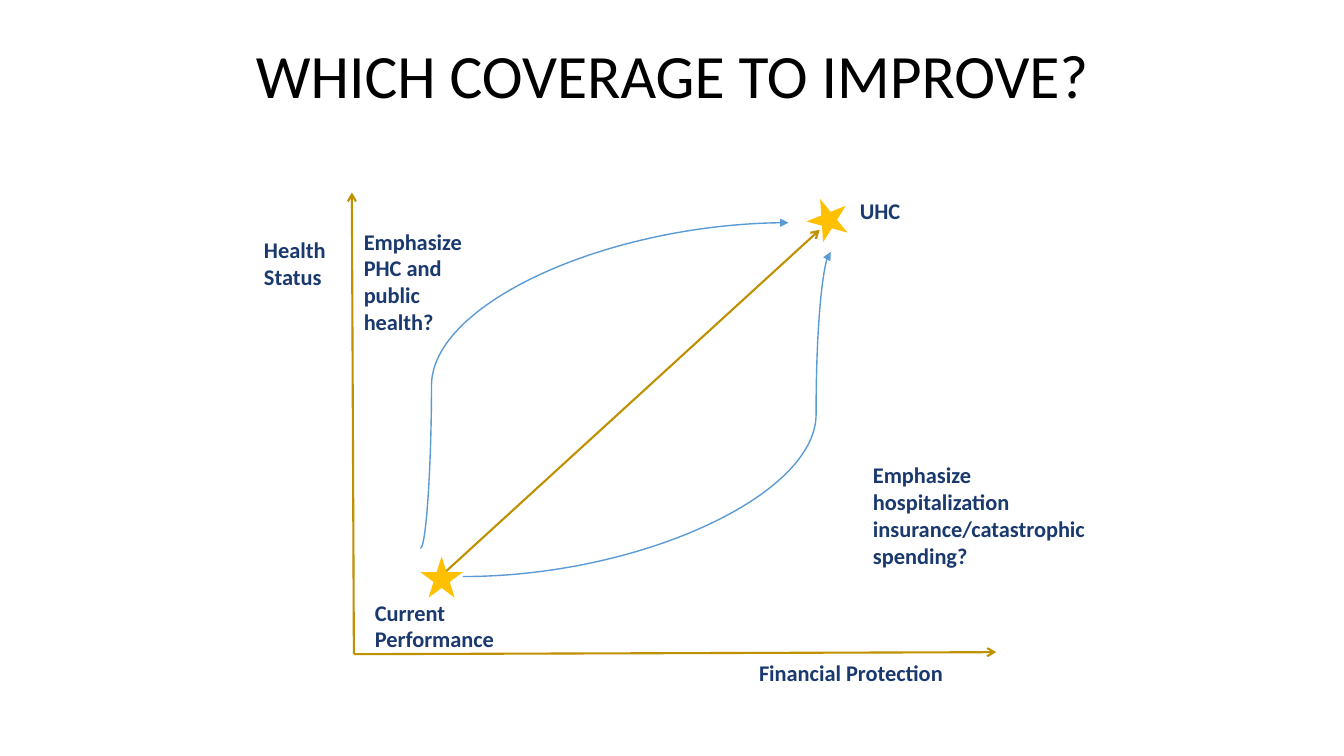
from lxml import etree
from pptx import Presentation
from pptx.dml.color import RGBColor
from pptx.enum.shapes import MSO_CONNECTOR, MSO_SHAPE
from pptx.enum.text import MSO_ANCHOR, MSO_AUTO_SIZE, PP_ALIGN
from pptx.oxml.ns import qn
from pptx.util import Inches, Pt

STRAIGHT, CURVE = MSO_CONNECTOR.STRAIGHT, MSO_CONNECTOR.CURVE
STAR = MSO_SHAPE.STAR_5_POINT
TOP, CENTER, LEFT = MSO_ANCHOR.TOP, PP_ALIGN.CENTER, PP_ALIGN.LEFT
FIT, FIXED = MSO_AUTO_SIZE.SHAPE_TO_FIT_TEXT, MSO_AUTO_SIZE.NONE

COLORS = {"title": "000000", "label": "1A396E", "axis": "BF9000",
          "star": "FFC000", "curve": "5B9BD5"}
FONT = "Calibri"

TITLE = "WHICH COVERAGE TO IMPROVE?"
TITLE_BOX = (0.92, 0.4, 11.5, 1.45)

# text, (left, top, width, height)
LABELS = [
    ("Current Performance", (3.62, 5.89, 2.06, 0.64)),
    ("UHC", (8.43, 1.91, 1.84, 0.37)),
    ("Health Status", (2.52, 2.29, 1.1, 0.64)),
    ("Financial Protection", (7.43, 6.49, 2.33, 0.37)),
    ("Emphasize PHC and public health?", (3.51, 2.21, 1.27, 1.18)),
    ("Emphasize hospitalization insurance/catastrophic spending?",
     (8.56, 4.53, 2.41, 1.18)),
]

# start, end
ORIGIN = (3.51, 6.49)
STRAIGHT_ARROWS = [
    (ORIGIN, (3.49, 1.91)),
    (ORIGIN, (9.88, 6.47)),
    ((4.4, 5.69), (8.13, 2.28)),
]
# start, end, bend position as a share of the width
CURVED_ARROWS = [
    ((4.17, 5.44), (7.82, 2.21), 0.03),
    ((4.59, 5.72), (8.24, 2.5), 0.96),
]

# left, top, rotation
STARS = [(4.17, 5.52, 0), (8, 1.96, 338.5)]
STAR_SIZE = (0.42, 0.41)


def rgb(name):
    return RGBColor.from_string(COLORS[name])


def write(sp, text, size, color, bold=False, align=LEFT, spacing=1.0, fit=FIT):
    tf = sp.text_frame
    tf.word_wrap = True
    tf.auto_size = fit
    tf.vertical_anchor = TOP
    p = tf.paragraphs[0]
    p.alignment = align
    p.line_spacing = spacing
    r = p.add_run()
    r.text = text
    r.font.name = FONT
    r.font.size = Pt(size)
    r.font.bold = bold
    r.font.color.rgb = rgb(color)


def add_arrow(s, kind, start, end, color, width, head, bend=None):
    line = s.shapes.add_connector(kind, *map(Inches, start + end))
    line.line.color.rgb = rgb(color)
    line.line.width = Pt(width)
    sp_pr = line._element.spPr
    etree.SubElement(sp_pr.find(qn("a:ln")), qn("a:tailEnd"), type=head)
    etree.SubElement(sp_pr, qn("a:effectLst"))
    if bend is not None:
        guides = sp_pr.find(qn("a:prstGeom")).find(qn("a:avLst"))
        etree.SubElement(guides, qn("a:gd"), name="adj1",
                         fmla=f"val {round(bend * 100000)}")


def main():
    prs = Presentation()
    prs.slide_width, prs.slide_height = Inches(13.33), Inches(7.5)
    s = prs.slides.add_slide(prs.slide_layouts[5])

    # Title
    title = s.shapes.title
    title.left, title.top, title.width, title.height = map(Inches, TITLE_BOX)
    write(title, TITLE, 44, "title", align=CENTER, spacing=0.9, fit=FIXED)

    # Axes and the direct path
    for start, end in STRAIGHT_ARROWS:
        add_arrow(s, STRAIGHT, start, end, "axis", 1.5, "arrow")

    # Start and goal stars
    for left, top, rotation in STARS:
        star = s.shapes.add_shape(STAR, *map(Inches, (left, top) + STAR_SIZE))
        star.rotation = rotation
        star.shadow.inherit = False
        star.fill.solid()
        star.fill.fore_color.rgb = rgb("star")
        star.line.fill.background()

    # Labels
    for text, box in LABELS:
        write(s.shapes.add_textbox(*map(Inches, box)), text, 16, "label", bold=True)

    # Alternative paths
    for start, end, bend in CURVED_ARROWS:
        add_arrow(s, CURVE, start, end, "curve", 1, "triangle", bend)

    prs.save("out.pptx")


if __name__ == "__main__":
    main()
